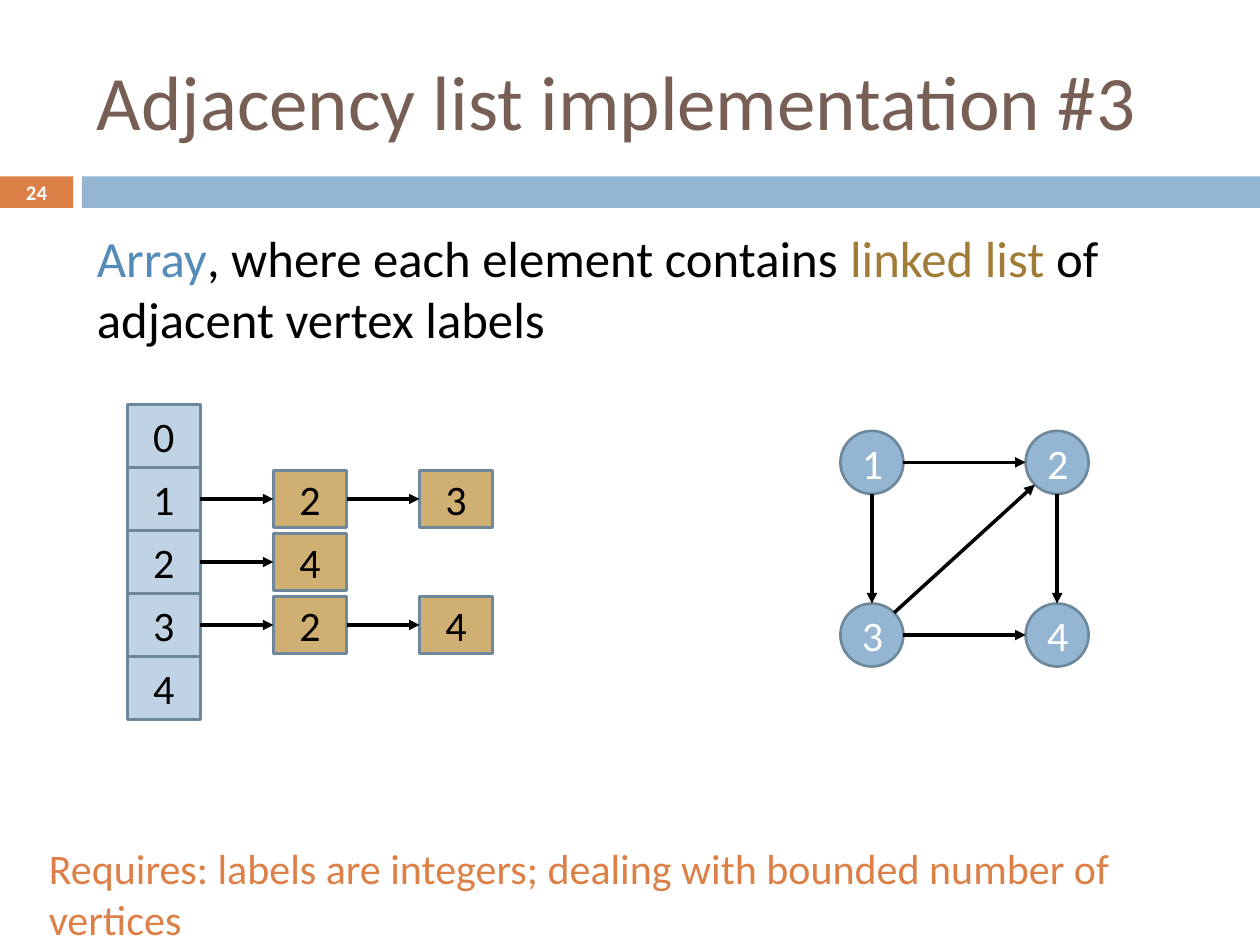
from lxml import etree
from pptx import Presentation
from pptx.dml.color import RGBColor
from pptx.enum.shapes import MSO_CONNECTOR, MSO_SHAPE
from pptx.enum.text import MSO_ANCHOR, PP_ALIGN
from pptx.oxml.ns import qn
from pptx.util import Inches, Pt

# Content
TITLE = "Adjacency list implementation #3"
PAGE_NUMBER = "24"
DESCRIPTION = [
    ("Array", "array_word"),
    (", where each element contains ", "ink"),
    ("linked list ", "list_word"),
    ("of adjacent vertex labels", "ink"),
]
ADJACENCY = [(0, []), (1, [2, 3]), (2, [4]), (3, [2, 4]), (4, [])]
VERTICES = {1: (0, 0), 2: (1, 0), 3: (0, 1), 4: (1, 1)}  # label: column, row
REQUIREMENT = ("Requires: labels are integers; "
               "dealing with bounded number of vertices")

THEME = {
    "font": "Calibri",
    "sizes": {"title": 44, "body": 29, "label": 24, "page": 11.9},
    "colors": {
        "title": "775F55", "ink": "000000", "white": "FFFFFF",
        "accent": "DD8047", "blue": "94B6D2", "cell": "BFD3E4",
        "node": "D0AF72", "outline": "6D879B",
        "array_word": "558BB8", "list_word": "A17C36",
    },
}

# Layout, in inches
CELL_LEFT, CELL_TOP, CELL_WIDTH, CELL_HEIGHT = 1.01, 3.21, 0.58, 0.5
NODE_LEFT, NODE_STEP, NODE_HEIGHT = 2.17, 1.16, 0.45
VERTEX_CENTER, VERTEX_STEP, RADIUS = (6.92, 3.67), (1.47, 1.37), 0.25

prs = Presentation()
prs.slide_width, prs.slide_height = Inches(10), Inches(7.5)
slide = prs.slides.add_slide(prs.slide_layouts[6])


def color(name):
    return RGBColor.from_string(THEME["colors"][name])


def style(paragraph, size, color_name=None):
    paragraph.font.name = THEME["font"]
    paragraph.font.size = Pt(THEME["sizes"][size])
    if color_name:
        paragraph.font.color.rgb = color(color_name)


def add_block(kind, box, fill, outlined=True, label=None, ink="ink"):
    block = slide.shapes.add_shape(kind, *map(Inches, box))
    block.shadow.inherit = False
    block.fill.solid()
    block.fill.fore_color.rgb = color(fill)
    if outlined:
        block.line.color.rgb = color("outline")
        block.line.width = Pt(1.5)
    else:
        block.line.fill.background()
    if label is not None:
        frame = block.text_frame
        frame.vertical_anchor = MSO_ANCHOR.MIDDLE
        paragraph = frame.paragraphs[0]
        paragraph.text = str(label)
        paragraph.alignment = PP_ALIGN.CENTER
        style(paragraph, "label", ink)
    return block


def add_text(box, size, text="", color_name=None, anchor=MSO_ANCHOR.TOP):
    frame = slide.shapes.add_textbox(*map(Inches, box)).text_frame
    frame.word_wrap = True
    frame.vertical_anchor = anchor
    paragraph = frame.paragraphs[0]
    paragraph.text = text
    style(paragraph, size, color_name)
    return paragraph


def add_arrow(start=(0, 0), end=(0, 0)):
    arrow = slide.shapes.add_connector(
        MSO_CONNECTOR.STRAIGHT, *map(Inches, (*start, *end)))
    arrow.line.color.rgb = color("ink")
    arrow.line.width = Pt(2)
    etree.SubElement(arrow.line._get_or_add_ln(), qn("a:tailEnd"), type="triangle")
    etree.SubElement(arrow._element.spPr, qn("a:effectLst"))
    return arrow


# Header band, title and page number
add_block(MSO_SHAPE.RECTANGLE, (0, 1.4, 0.58, 0.25), "accent", outlined=False)
add_block(MSO_SHAPE.RECTANGLE, (0.65, 1.4, 9.35, 0.25), "blue", outlined=False)
add_text((0.67, 0.25, 8.92, 1.08), "title", TITLE, "title", MSO_ANCHOR.MIDDLE)
page = add_text((0, 1.39, 0.58, 0.27), "page", PAGE_NUMBER, "white",
                MSO_ANCHOR.MIDDLE)
page.alignment = PP_ALIGN.CENTER
page.font.bold = True

# Description
description = add_text((0.67, 1.75, 8.92, 4.92), "body")
description.space_before = Pt(7)
for words, color_name in DESCRIPTION:
    run = description.add_run()
    run.text = words
    run.font.color.rgb = color(color_name)

# Array cells, each followed by its linked list
for row, (label, neighbours) in enumerate(ADJACENCY):
    top = CELL_TOP + row * CELL_HEIGHT
    previous = add_block(MSO_SHAPE.RECTANGLE,
                         (CELL_LEFT, top, CELL_WIDTH, CELL_HEIGHT),
                         "cell", label=label)
    node_top = top + (CELL_HEIGHT - NODE_HEIGHT) / 2
    for column, neighbour in enumerate(neighbours):
        node = add_block(MSO_SHAPE.RECTANGLE,
                         (NODE_LEFT + column * NODE_STEP, node_top,
                          CELL_WIDTH, NODE_HEIGHT), "node", label=neighbour)
        link = add_arrow()
        link.begin_connect(previous, 3)
        link.end_connect(node, 1)
        previous = node

# Graph vertices
centers = {}
for label, position in VERTICES.items():
    x, y = (origin + step * index for origin, step, index
            in zip(VERTEX_CENTER, VERTEX_STEP, position))
    centers[label] = x, y
    add_block(MSO_SHAPE.OVAL, (x - RADIUS, y - RADIUS, 2 * RADIUS, 2 * RADIUS),
              "blue", label=label, ink="white")

# Graph edges, from rim to rim at the nearest multiple of 45 degrees
for label, neighbours in ADJACENCY:
    for neighbour in neighbours:
        (x1, y1), (x2, y2) = centers[label], centers[neighbour]
        across, down = (x2 > x1) - (x2 < x1), (y2 > y1) - (y2 < y1)
        reach = RADIUS / (across ** 2 + down ** 2) ** 0.5
        add_arrow((x1 + across * reach, y1 + down * reach),
                  (x2 - across * reach, y2 - down * reach))

# Requirement
add_text((0.29, 6.64, 9.67, 0.5), "label", REQUIREMENT, "accent")

prs.save("out.pptx")
